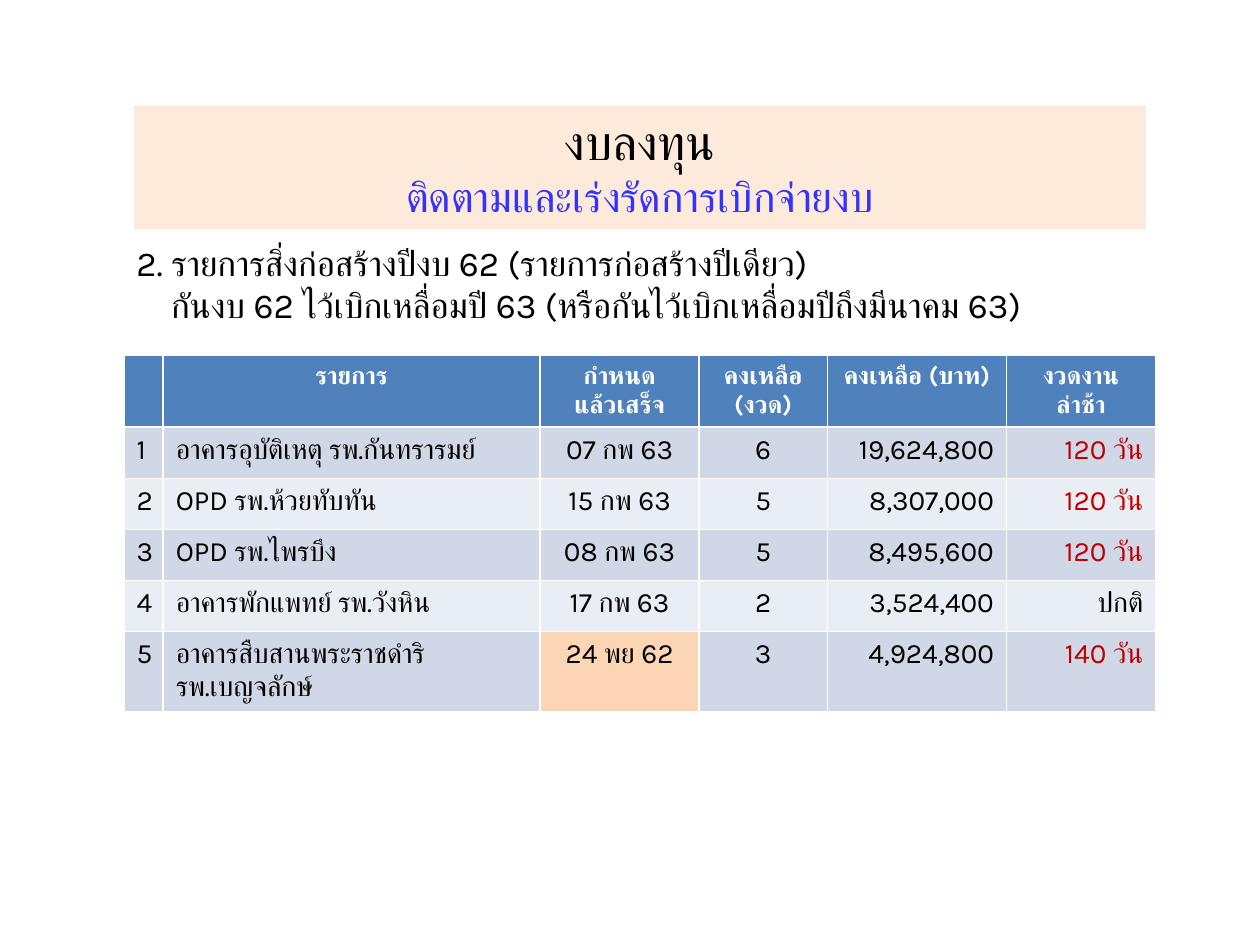
from dataclasses import dataclass

from lxml.etree import SubElement
from pptx import Presentation
from pptx.dml.color import RGBColor
from pptx.enum.shapes import MSO_SHAPE
from pptx.enum.text import MSO_ANCHOR, PP_ALIGN
from pptx.oxml.ns import qn
from pptx.util import Cm, Pt


@dataclass(frozen=True)
class Theme:
    """Colours, type sizes and font of the slide."""
    font: str = "Karla"
    ink: str = "000000"
    white: str = "FFFFFF"
    subtitle: str = "3333FF"
    late: str = "C00000"
    banner: str = "FDEADA"
    header: str = "4F81BD"
    bands: tuple = ("D0D8E8", "E9EDF4")
    highlight: str = "FCD5B5"
    title_size: int = 28
    subtitle_size: int = 24
    intro_size: int = 20
    header_size: int = 14
    body_size: int = 16


THEME = Theme()
ON_TIME = "ปกติ"
EARLIEST_DUE = "24 พย 62"
INTRO = (
    "2. รายการสิ่งก่อสร้างปีงบ 62 (รายการก่อสร้างปีเดียว)\n"
    "กันงบ 62 ไว้เบิกเหลื่อมปี 63 (หรือกันไว้เบิกเหลื่อมปีถึงมีนาคม 63)"
)
HEADINGS = ("", "รายการ", "กำหนด\nแล้วเสร็จ", "คงเหลือ (งวด)", "คงเหลือ (บาท)", "งวดงานล่าช้า")
PROJECTS = (
    ("1", "อาคารอุบัติเหตุ รพ.กันทรารมย์", "07 กพ 63", "6", "19,624,800", "120 วัน"),
    ("2", "OPD รพ.ห้วยทับทัน", "15 กพ 63", "5", "8,307,000", "120 วัน"),
    ("3", "OPD รพ.ไพรบึง", "08 กพ 63", "5", "8,495,600", "120 วัน"),
    ("4", "อาคารพักแพทย์ รพ.วังหิน", "17 กพ 63", "2", "3,524,400", ON_TIME),
    ("5", "อาคารสืบสานพระราชดำริ\nรพ.เบญจลักษ์", EARLIEST_DUE, "3", "4,924,800", "140 วัน"),
)
COLUMN_WIDTHS = (0.79, 7.6, 3.2, 2.59, 3.61, 3.01)
ALIGNMENTS = (PP_ALIGN.LEFT,) * 2 + (PP_ALIGN.CENTER,) * 2 + (PP_ALIGN.RIGHT,) * 2


def paint(part, color):
    """Give a shape or cell a solid fill."""
    part.fill.solid()
    part.fill.fore_color.rgb = RGBColor.from_string(color)


def style(paragraph, size, color, align=PP_ALIGN.LEFT, bold=False):
    """Format a paragraph and its runs for Latin and Thai script."""
    paragraph.alignment = align
    for run in paragraph.runs:
        run.font.name = THEME.font
        run.font.size = Pt(size)
        run.font.bold = bold
        run.font.color.rgb = RGBColor.from_string(color)
        SubElement(run.font._element, qn("a:cs"), typeface=THEME.font)


def fill_cell(cell, text, fill, size, color, align, bold=False):
    """Write and format one table cell."""
    paint(cell, fill)
    cell.text_frame.text = text
    for paragraph in cell.text_frame.paragraphs:
        style(paragraph, size, color, align, bold)


def add_intro(slide, left, top, width, height):
    """Place the two-line introduction, its second line indented."""
    frame = slide.shapes.add_textbox(left, top, width, height).text_frame
    frame.word_wrap = True
    frame.text = INTRO
    for paragraph in frame.paragraphs:
        style(paragraph, THEME.intro_size, THEME.ink)
    frame.paragraphs[1]._p.get_or_add_pPr().set("marL", str(Cm(0.7)))


def add_projects(slide, left, top, width, row_height):
    """Place the table of construction projects."""
    rows = len(PROJECTS) + 1
    table = slide.shapes.add_table(
        rows, len(HEADINGS), left, top, width, row_height * rows
    ).table
    for column, share in zip(table.columns, COLUMN_WIDTHS):
        column.width = int(width * share / sum(COLUMN_WIDTHS))
    for cell, heading in zip(table.rows[0].cells, HEADINGS):
        fill_cell(cell, heading, THEME.header, THEME.header_size, THEME.white,
                  PP_ALIGN.CENTER, bold=True)
    for index, project in enumerate(PROJECTS):
        band = THEME.bands[index % 2]
        last = len(project) - 1
        for column, value in enumerate(project):
            late = column == last and value != ON_TIME
            fill_cell(
                table.cell(index + 1, column), value,
                THEME.highlight if value == EARLIEST_DUE else band,
                THEME.body_size, THEME.late if late else THEME.ink,
                ALIGNMENTS[column],
            )


def add_banner(slide, left, top, width, height):
    """Place the title banner with its subtitle."""
    banner = slide.shapes.add_shape(MSO_SHAPE.RECTANGLE, left, top, width, height)
    banner.shadow.inherit = False
    banner.line.fill.background()
    paint(banner, THEME.banner)
    frame = banner.text_frame
    frame.word_wrap = True
    frame.vertical_anchor = MSO_ANCHOR.TOP
    frame.text = "งบลงทุน\nติดตามและเร่งรัดการเบิกจ่ายงบ"
    title, subtitle = frame.paragraphs
    style(title, THEME.title_size, THEME.ink, PP_ALIGN.CENTER)
    style(subtitle, THEME.subtitle_size, THEME.subtitle, PP_ALIGN.CENTER)


def main():
    """Build and save the investment budget slide."""
    deck = Presentation()
    deck.slide_width, deck.slide_height = Cm(25.4), Cm(19.05)
    slide = deck.slides.add_slide(deck.slide_layouts[6])
    add_intro(slide, Cm(2.5), Cm(4.75), Cm(20.8), Cm(1.96))
    add_projects(slide, Cm(2.5), Cm(7.17), Cm(20.8), Cm(1.03))
    add_banner(slide, Cm(2.7), Cm(2.13), Cm(20.4), Cm(2.49))
    deck.save("out.pptx")


if __name__ == "__main__":
    main()
